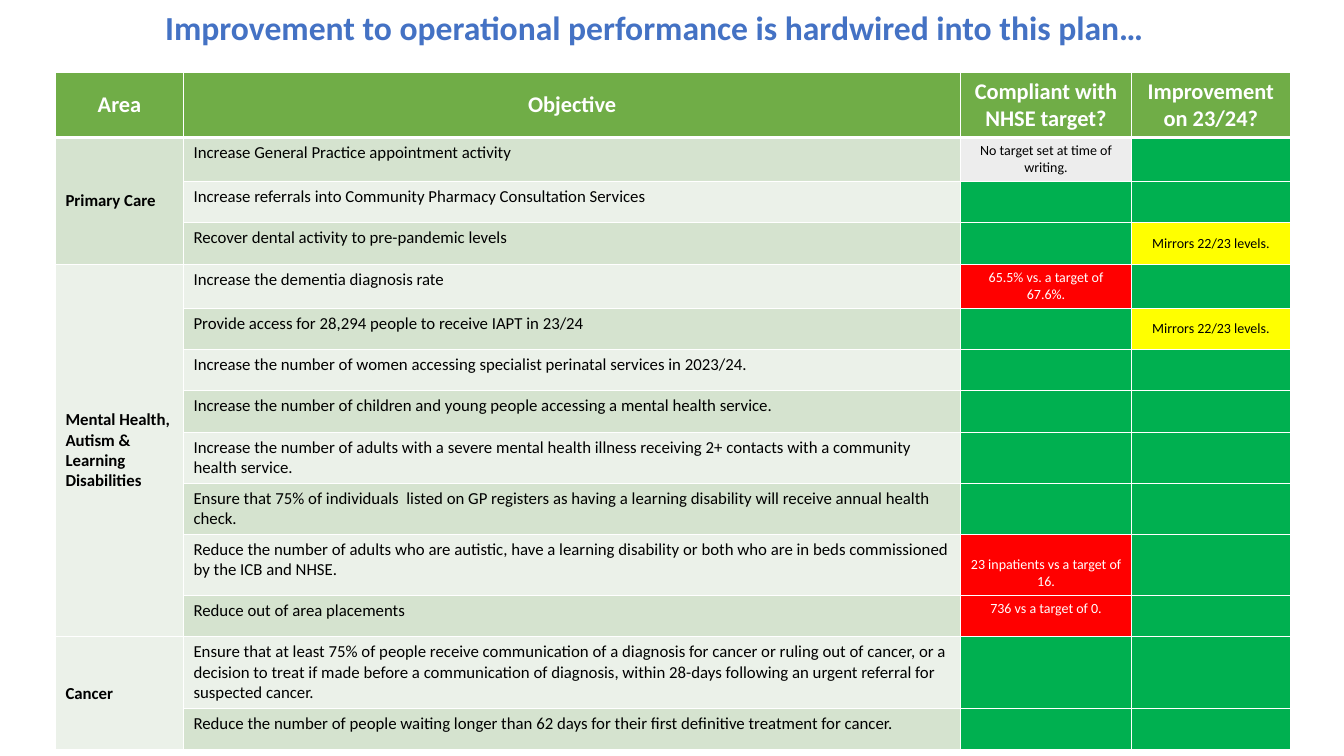
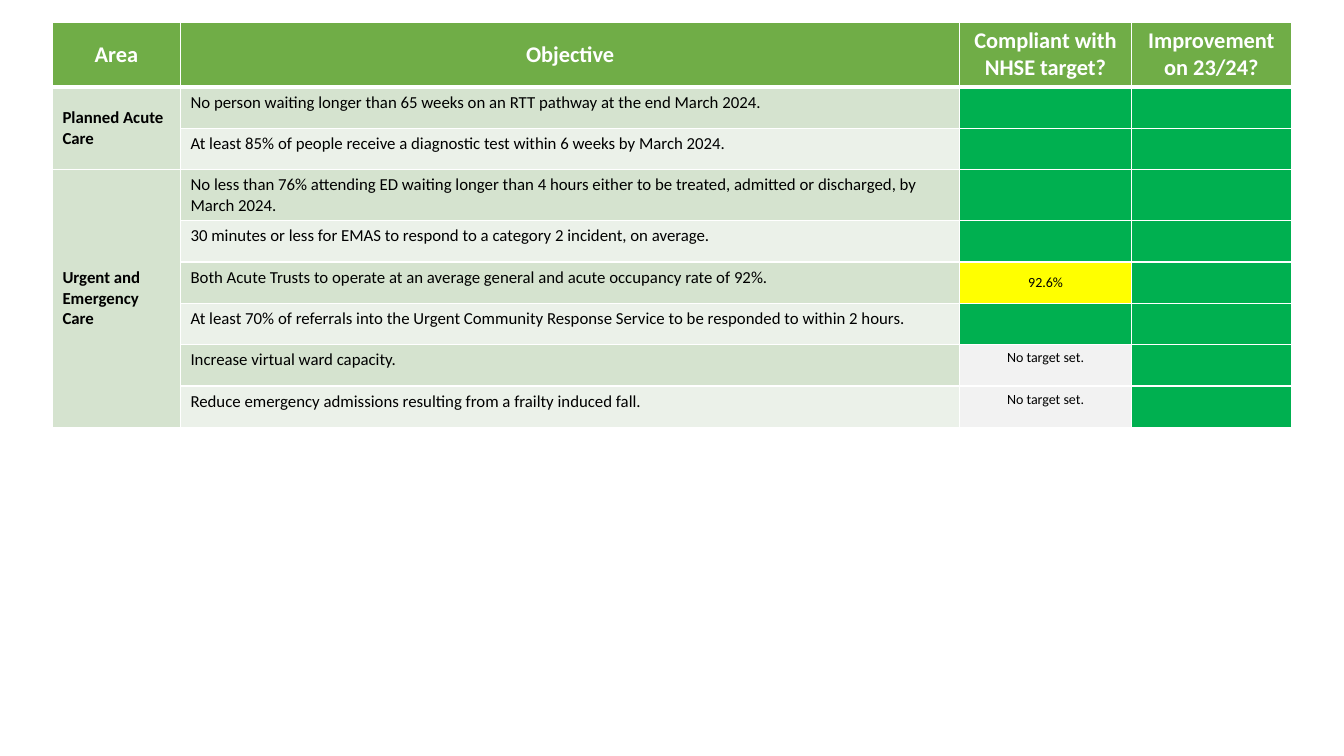
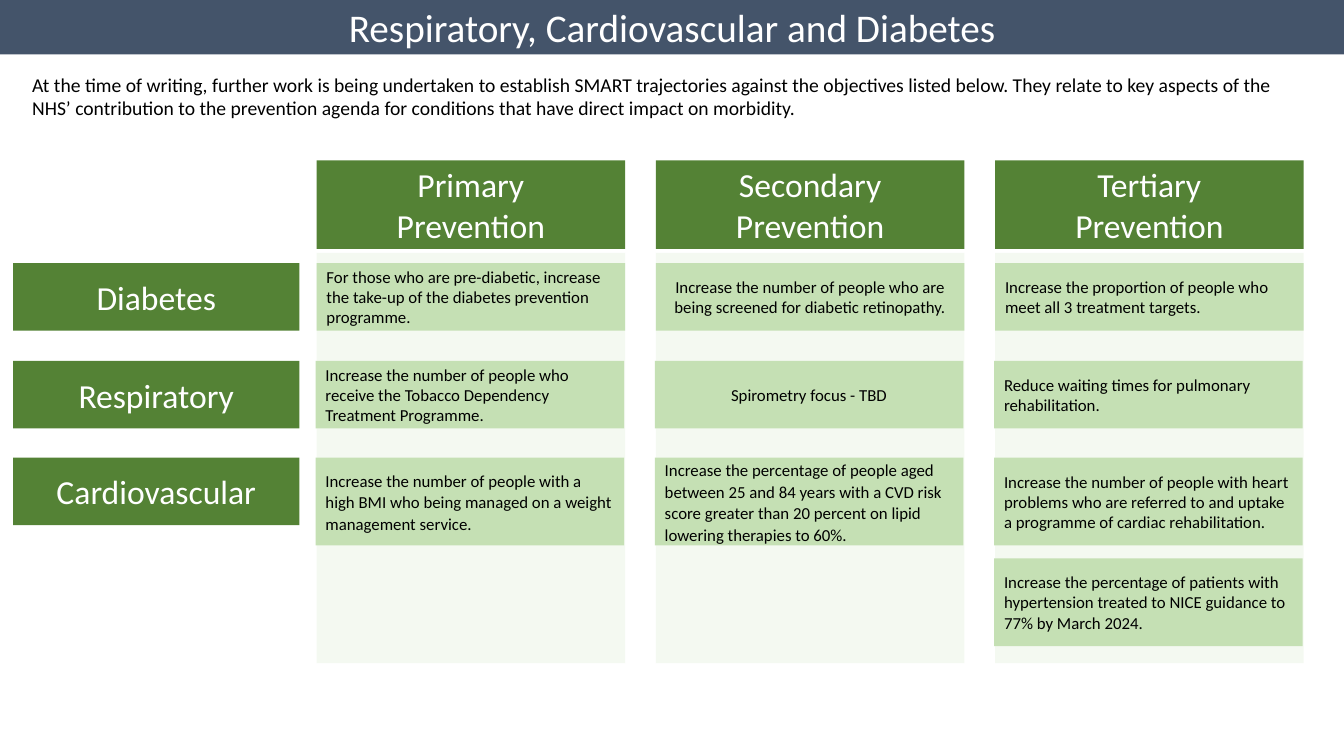
from dataclasses import dataclass
from typing import Any

from lxml import etree
from pptx import Presentation
from pptx import util as u
from pptx.dml.color import RGBColor
from pptx.enum import shapes, text
from pptx.oxml import ns

FONT = "Calibri"
WHITE, BLACK, BLUE, SLATE = "FFFFFF", "000000", "4472C4", "44546A"
HEAD, PALE, MIST = "70AD47", "D5E3CF", "EBF1E9"
GREEN, RED, AMBER = "00B050", "FF0000", "FFFF00"
DEEP, LEAF, WASH = "548235", "C5E0B4", "E2F0D9"
MID, TOP = text.MSO_ANCHOR.MIDDLE, text.MSO_ANCHOR.TOP
MAIN, LEFT = text.PP_ALIGN.CENTER, text.PP_ALIGN.LEFT
HEADS = ("Area", "Objective", "Compliant with NHSE target?", "Improvement on 23/24?")
ROW = 0.41


@dataclass(frozen=True)
class Box:
    x: float
    y: float
    w: float
    h: float

    def dims(self) -> list[int]:
        return [u.Inches(v) for v in (self.x, self.y, self.w, self.h)]


@dataclass(frozen=True)
class Mark:
    words: str = ""
    fill: str = GREEN
    ink: str = BLACK
    anchor: Any = TOP
    drop: float = 0.05


@dataclass(frozen=True)
class Goal:
    words: str
    hit: Mark = Mark()
    gain: Mark = Mark()


@dataclass(frozen=True)
class Area:
    name: str
    goals: tuple[Goal, ...]


@dataclass(frozen=True)
class Card:
    words: str
    align: Any = LEFT
    loose: bool = False


@dataclass(frozen=True)
class Lane:
    name: str
    y: float
    h: float
    shift: float
    cards: tuple[Card, ...]


MIRROR = Mark("Mirrors 22/23 levels.", AMBER, anchor=MID)
UNSET = Mark("No target set.", "F2F2F2")

FIRST = (
    Area("Primary Care", (
        Goal("Increase General Practice appointment activity",
             Mark("No target set at time of writing.", "EDEDED")),
        Goal("Increase referrals into Community Pharmacy Consultation Services"),
        Goal("Recover dental activity to pre-pandemic levels", gain=MIRROR),
    )),
    Area("Mental Health, Autism & Learning Disabilities", (
        Goal("Increase the dementia diagnosis rate",
             Mark("65.5% vs. a target of 67.6%.", RED, WHITE)),
        Goal("Provide access for 28,294 people to receive IAPT in 23/24", gain=MIRROR),
        Goal("Increase the number of women accessing specialist perinatal services in 2023/24."),
        Goal("Increase the number of children and young people accessing a mental health service."),
        Goal("Increase the number of adults with a severe mental health illness receiving 2+ "
             "contacts with a community health service."),
        Goal("Ensure that 75% of individuals  listed on GP registers as having a learning "
             "disability will receive annual health check."),
        Goal("Reduce the number of adults who are autistic, have a learning disability or both "
             "who are in beds commissioned by the ICB and NHSE.",
             Mark("23 inpatients vs a target of 16.", RED, WHITE, drop=0.22)),
        Goal("Reduce out of area placements", Mark("736 vs a target of 0.", RED, WHITE)),
    )),
    Area("Cancer", (
        Goal("Ensure that at least 75% of people receive communication of a diagnosis for cancer "
             "or ruling out of cancer, or a decision to treat if made before a communication of "
             "diagnosis, within 28-days following an urgent referral for suspected cancer."),
        Goal("Reduce the number of people waiting longer than 62 days for their first definitive "
             "treatment for cancer."),
    )),
)

NEXT = (
    Area("Planned Acute Care", (
        Goal("No person waiting longer than 65 weeks on an RTT pathway at the end March 2024."),
        Goal("At least 85% of people receive a diagnostic test within 6 weeks by March 2024."),
    )),
    Area("Urgent and Emergency Care", (
        Goal("No less than 76% attending ED waiting longer than 4 hours either to be treated, "
             "admitted or discharged, by March 2024."),
        Goal("30 minutes or less for EMAS to respond to a category 2 incident, on average."),
        Goal("Both Acute Trusts to operate at an average general and acute occupancy rate of 92%.",
             Mark("92.6%", AMBER, anchor=MID)),
        Goal("At least 70% of referrals into the Urgent Community Response Service to be "
             "responded to within 2 hours."),
        Goal("Increase virtual ward capacity.", UNSET),
        Goal("Reduce emergency admissions resulting from a frailty induced fall.", UNSET),
    )),
)

STAGES = ("Primary\nPrevention", "Secondary Prevention", "Tertiary\nPrevention")
LANES = (
    Lane("Diabetes", 2.61, 0.67, 0, (
        Card("For those who are pre-diabetic, increase the take-up of the diabetes prevention "
             "programme."),
        Card("Increase the number of people who are being screened for diabetic retinopathy.", MAIN),
        Card("Increase the proportion of people who meet all 3 treatment targets."),
    )),
    Lane("Respiratory", 3.58, 0.67, 0.01, (
        Card("Increase the number of people who receive the Tobacco Dependency Treatment "
             "Programme."),
        Card("Spirometry focus - TBD", MAIN),
        Card("Reduce waiting times for pulmonary rehabilitation."),
    )),
    Lane("Cardiovascular", 4.54, 0.87, 0.01, (
        Card("Increase the number of people with a high BMI who being managed on a weight "
             "management service.", loose=True),
        Card("Increase the percentage of people aged between 25 and 84 years with a CVD risk "
             "score greater than 20 percent on lipid lowering therapies to 60%.", loose=True),
        Card("Increase the number of people with heart problems who are referred to and uptake "
             "a programme of cardiac rehabilitation."),
    )),
)
EXTRA = Card("Increase the percentage of patients with hypertension treated to NICE guidance "
             "to 77% by March 2024.")
INTRO = ("At the time of writing, further work is being undertaken to establish SMART "
         "trajectories against the objectives listed below. They relate to key aspects of the "
         "NHS’ contribution to the prevention agenda for conditions that have direct impact on "
         "morbidity.")


def tint(code: str) -> RGBColor:
    return RGBColor.from_string(code)


def paint(item: Any, code: str) -> None:
    item.fill.solid()
    item.fill.fore_color.rgb = tint(code)


def write(frame: Any, words: str, size: float, ink: str, bold: bool = False,
          align: Any = LEFT, loose: bool = False) -> None:
    frame.word_wrap = True
    form = {"name": FONT, "size": u.Pt(size), "bold": bold}
    flow = {"alignment": align}
    if loose:
        flow |= {"line_spacing": 1.07, "space_after": u.Pt(8)}
    for i, line in enumerate(words.split("\n")):
        para = frame.add_paragraph() if i else frame.paragraphs[0]
        run = para.add_run()
        run.text = line
        run.font.color.rgb = tint(ink)
        for key, val in form.items():
            setattr(run.font, key, val)
        for key, val in flow.items():
            setattr(para, key, val)


def edge(cell: Any, base: float) -> None:
    props = cell._tc.get_or_add_tcPr()
    sides = {"lnL": 1, "lnR": 1, "lnT": 1, "lnB": base}
    for i, (side, width) in enumerate(sides.items()):
        line = etree.Element(ns.qn("a:" + side), w=str(u.Pt(width)))
        fill = etree.SubElement(line, ns.qn("a:solidFill"))
        etree.SubElement(fill, ns.qn("a:srgbClr"), val=WHITE)
        props.insert(i, line)


def fill(cell: Any, code: str, words: str = "", size: float = 12, ink: str = BLACK,
         bold: bool = False, align: Any = LEFT, anchor: Any = TOP,
         drop: float = 0.05, base: float = 1) -> None:
    paint(cell, code)
    edge(cell, base)
    cell.vertical_anchor = anchor
    cell.margin_top = u.Inches(drop)
    if words:
        write(cell.text_frame, words, size, ink, bold, align)


def grid(slide: Any, x: float, y: float, cols: tuple[float, ...],
         areas: tuple[Area, ...]) -> None:
    count = 1 + sum(len(area.goals) for area in areas)
    box = Box(x, y, sum(cols), count * ROW)
    table = slide.shapes.add_table(count, len(cols), *box.dims()).table
    table.horz_banding = False
    for col, wide in zip(table.columns, cols):
        col.width = u.Inches(wide)
    for row in table.rows:
        row.height = u.Inches(ROW)
    for i, name in enumerate(HEADS):
        fill(table.cell(0, i), HEAD, name, 16, WHITE, True, MAIN, MID, base=3)
    at = 1
    for area in areas:
        table.cell(at, 0).merge(table.cell(at + len(area.goals) - 1, 0))
        shade = PALE if at % 2 else MIST
        for i, goal in enumerate(area.goals):
            fill(table.cell(at, 0), shade, "" if i else area.name, bold=True, anchor=MID)
            fill(table.cell(at, 1), PALE if at % 2 else MIST, goal.words)
            for j, mark in enumerate((goal.hit, goal.gain), 2):
                fill(table.cell(at, j), mark.fill, mark.words, 10, mark.ink, False, MAIN,
                     mark.anchor, mark.drop)
            at += 1


def block(slide: Any, box: Box, code: str) -> Any:
    item = slide.shapes.add_shape(shapes.MSO_SHAPE.RECTANGLE, *box.dims())
    item.shadow.inherit = False
    item.line.fill.background()
    item.text_frame.vertical_anchor = MID
    paint(item, code)
    return item


def tile(slide: Any, box: Box, words: str) -> None:
    write(block(slide, box, DEEP).text_frame, words, 24, WHITE, align=MAIN)


def note(slide: Any, box: Box, card: Card) -> None:
    frame = block(slide, box, LEAF).text_frame
    write(frame, card.words, 12, BLACK, align=card.align, loose=card.loose)


def title(slide: Any, box: Box, words: str, size: float, ink: str, bold: bool = False) -> Any:
    item = slide.shapes.title
    for key, val in zip(("left", "top", "width", "height"), box.dims()):
        setattr(item, key, val)
    item.text_frame.auto_size = text.MSO_AUTO_SIZE.NONE
    item.text_frame.vertical_anchor = MID
    write(item.text_frame, words, size, ink, bold, MAIN)
    return item


def chart(slide: Any) -> None:
    wide = 3.06
    lefts = [3.14 + i * (9.87 - 3.14) / 2 for i in range(len(STAGES))]
    for left, stage in zip(lefts, STAGES):
        tile(slide, Box(left, 1.59, wide, 0.88), stage)
        back = block(slide, Box(left, 2.51, wide, 4.07), WASH)
        hue = back.fill._xPr.find(".//" + ns.qn("a:srgbClr"))
        etree.SubElement(hue, ns.qn("a:alpha"), val="35000")
    for lane in LANES:
        tile(slide, Box(0.13, lane.y, 2.84, 0.67), lane.name)
        for left, card in zip(lefts, lane.cards):
            note(slide, Box(left - lane.shift, lane.y, wide, lane.h), card)
    note(slide, Box(lefts[-1] - 0.01, 5.54, wide, 0.87), EXTRA)


def main() -> None:
    deck = Presentation()
    deck.slide_width, deck.slide_height = u.Inches(13.33), u.Inches(7.5)
    named, blank = deck.slide_layouts[5], deck.slide_layouts[6]

    plan = deck.slides.add_slide(named)
    title(plan, Box(0, 0.02, 12.98, 0.5),
          "Improvement to operational performance is hardwired into this plan…", 24, BLUE, True)
    grid(plan, 0.55, 0.72, (1.27, 7.71, 1.69, 1.58), FIRST)

    grid(deck.slides.add_slide(blank), 0.52, 0.22, (1.27, 7.73, 1.7, 1.59), NEXT)

    care = deck.slides.add_slide(named)
    band = title(care, Box(0, 0, 13.33, 0.54), "Respiratory, Cardiovascular and Diabetes",
                 28, WHITE)
    paint(band, SLATE)
    chart(care)
    intro = care.shapes.add_textbox(*Box(0.22, 0.67, 12.89, 0.57).dims())
    write(intro.text_frame, INTRO, 14, BLACK)

    deck.save("out.pptx")


if __name__ == "__main__":
    main()
